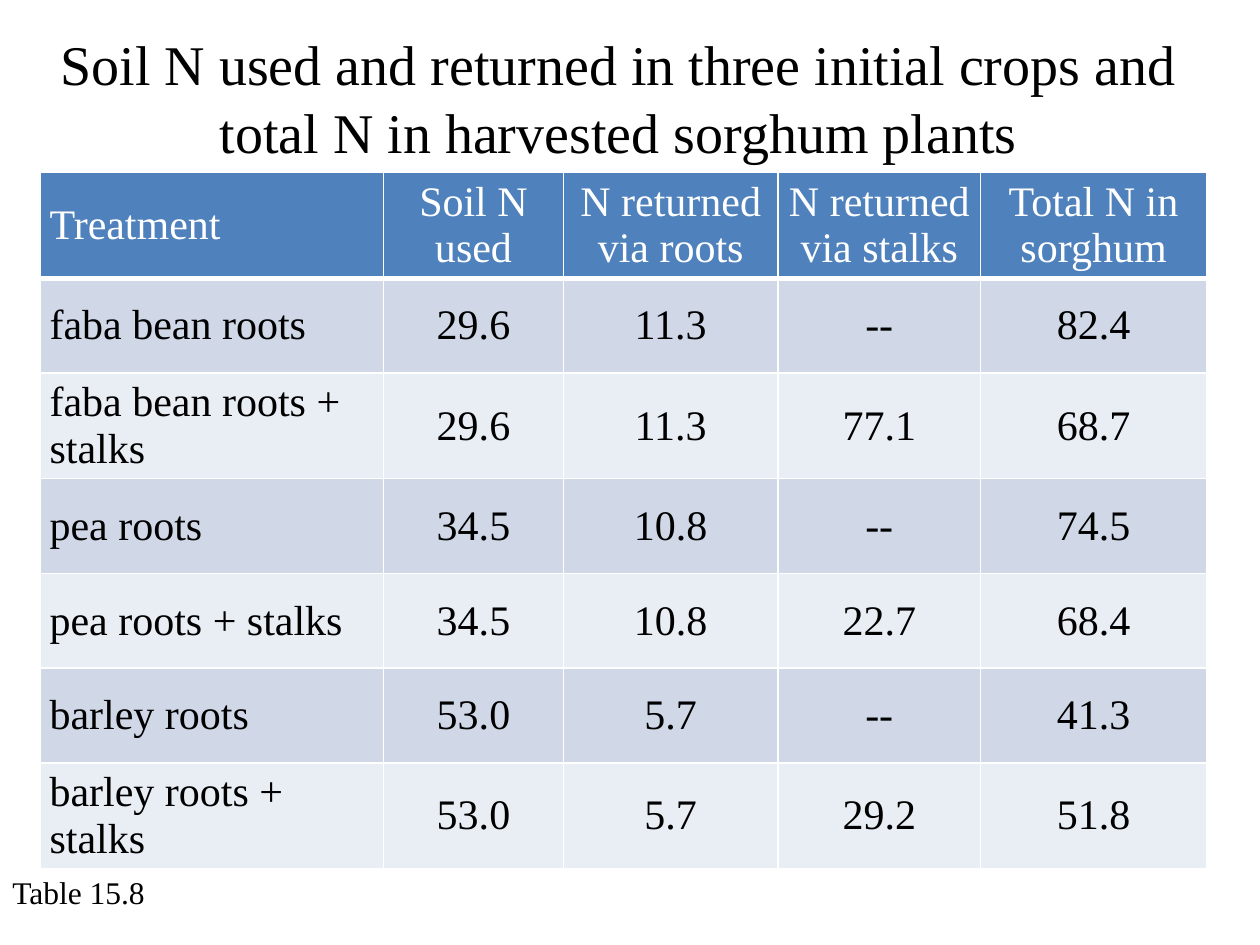
from lxml.etree import SubElement
from pptx import Presentation
from pptx.dml.color import RGBColor
from pptx.enum.text import MSO_ANCHOR as Anchor, MSO_AUTO_SIZE as AutoSize, PP_ALIGN as Align
from pptx.oxml.ns import qn
from pptx.util import Cm, Pt

WHITE, BLACK = "FFFFFF", "000000"
HEADER, BANDS = "4F81BD", ("D0D8E8", "E9EDF4")


def color(value):
    return RGBColor.from_string(value)


def write(frame, text, size, ink, align):
    paragraph = frame.paragraphs[0]
    paragraph.alignment = align
    run = paragraph.add_run()
    run.text = text
    run.font.name = "Times New Roman"
    run.font.size = Pt(size)
    run.font.bold = False
    run.font.color.rgb = color(ink)


prs = Presentation()
prs.slide_width, prs.slide_height = Cm(25.4), Cm(19.05)
slide = prs.slides.add_slide(prs.slide_layouts[6])

# Title
title = slide.shapes.add_textbox(Cm(0.5), Cm(0.48), Cm(23.95), Cm(3)).text_frame
title.word_wrap = True
title.auto_size = AutoSize.SHAPE_TO_FIT_TEXT
write(title, "Soil N used and returned in three initial crops and "
      "total N in harvested sorghum plants", 32, BLACK, Align.CENTER)

# Table number
caption = slide.shapes.add_textbox(Cm(0), Cm(17.48), Cm(3.38), Cm(1.02)).text_frame
caption.word_wrap = False
caption.auto_size = AutoSize.SHAPE_TO_FIT_TEXT
write(caption, "Table 15.8", 18, BLACK, Align.LEFT)

# Nitrogen table
treatments = [
    ("Treatment", "Soil N used", "N returned via roots", "N returned via stalks",
     "Total N in sorghum"),
    ("faba bean roots", "29.6", "11.3", "--", "82.4"),
    ("faba bean roots + stalks", "29.6", "11.3", "77.1", "68.7"),
    ("pea roots", "34.5", "10.8", "--", "74.5"),
    ("pea roots + stalks", "34.5", "10.8", "22.7", "68.4"),
    ("barley roots", "53.0", "5.7", "--", "41.3"),
    ("barley roots + stalks", "53.0", "5.7", "29.2", "51.8"),
]
widths = [6.91, 3.63, 4.32, 4.09, 4.55]
heights = [2.13, 1.91, 2.13, 1.91, 1.91, 1.91, 2.13]
table = slide.shapes.add_table(len(heights), len(widths), Cm(0.82), Cm(3.48),
                               Cm(sum(widths)), Cm(sum(heights))).table
for column, width in zip(table.columns, widths):
    column.width = Cm(width)
for row, height in zip(table.rows, heights):
    row.height = Cm(height)

for r, treatment in enumerate(treatments):
    for c, text in enumerate(treatment):
        cell = table.cell(r, c)
        cell.vertical_anchor = Anchor.MIDDLE
        cell.margin_left = cell.margin_right = Cm(0.18)
        cell.margin_top = cell.margin_bottom = 0
        write(cell.text_frame, text, 24, BLACK if r else WHITE,
              Align.CENTER if c else Align.LEFT)

        # White rules, thicker between the header and the body
        for side in ("lnL", "lnR", "lnT", "lnB"):
            thick = (r, side) in ((0, "lnB"), (1, "lnT"))
            line = SubElement(cell._tc.get_or_add_tcPr(), qn(f"a:{side}"),
                              w=str(Pt(3 if thick else 1)))
            SubElement(SubElement(line, qn("a:solidFill")), qn("a:srgbClr"), val=WHITE)

        cell.fill.solid()
        cell.fill.fore_color.rgb = color(BANDS[(r - 1) % 2] if r else HEADER)

prs.save("out.pptx")
